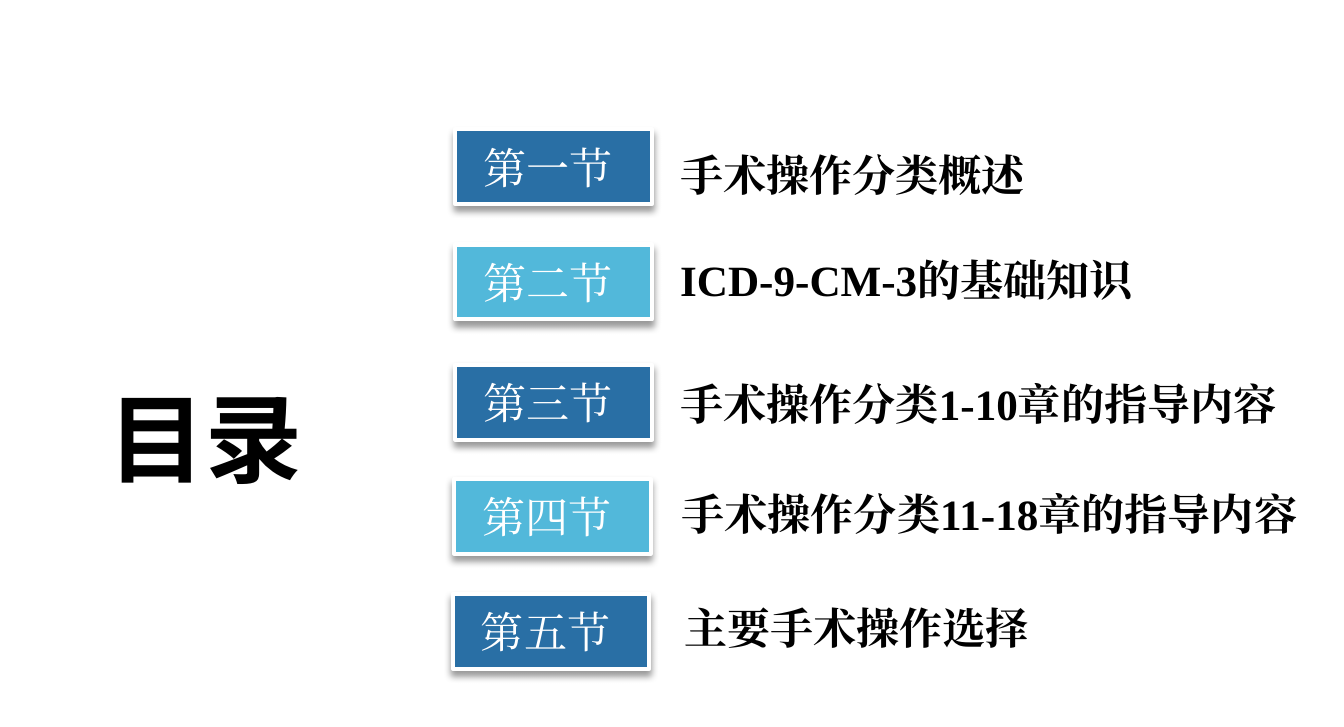
from dataclasses import dataclass

from lxml.etree import SubElement
from pptx import Presentation
from pptx.dml.color import RGBColor
from pptx.enum.shapes import MSO_SHAPE
from pptx.enum.text import MSO_ANCHOR, MSO_AUTO_SIZE, PP_ALIGN
from pptx.oxml.ns import qn
from pptx.shapes.autoshape import Shape
from pptx.slide import Slide
from pptx.text.text import _Paragraph as Paragraph
from pptx.util import Inches, Pt


@dataclass(frozen=True)
class Theme:
    dark_blue: RGBColor = RGBColor(0x29, 0x6F, 0xA5)
    light_blue: RGBColor = RGBColor(0x52, 0xB8, 0xDA)
    white: RGBColor = RGBColor(0xFF, 0xFF, 0xFF)
    black: RGBColor = RGBColor(0, 0, 0)
    title_font: str = "Noto Sans CJK SC"
    body_font: str = "Times New Roman"
    title_size: Pt = Pt(54)
    body_size: Pt = Pt(24)
    border: Pt = Pt(2.25)
    shadow_blur: Pt = Pt(4)
    shadow_distance: Pt = Pt(3)


@dataclass(frozen=True)
class Section:
    label: str
    title: str
    label_left: float
    label_top: float
    title_left: float
    title_top: float
    title_width: float


THEME = Theme()

SECTIONS = [
    Section("第一节 ", "手术操作分类概述", 3.52, 1.0, 5.16, 1.1, 3.64),
    Section("第二节 ", "ICD-9-CM-3的基础知识", 3.52, 1.89, 5.16, 1.91, 3.91),
    Section("第三节 ", "手术操作分类1-10章的指导内容", 3.52, 2.82, 5.16, 2.87, 4.99),
    Section("第四节 ", "手术操作分类11-18章的指导内容", 3.51, 3.7, 5.17, 3.72, 5.22),
    Section("第五节 ", "主要手术操作选择", 3.5, 4.59, 5.19, 4.6, 5.2),
]


def add_span(para: Paragraph, text: str, font: str, size: Pt, color: RGBColor, bold: bool) -> None:
    span = para.add_run()
    span.text = text
    span.font.name = font
    span.font.size = size
    span.font.bold = bold
    span.font.color.rgb = color
    SubElement(span.font._element, qn("a:ea"), typeface=font)


def add_shadow(shape: Shape) -> None:
    shape.shadow.inherit = False
    effects = shape._element.spPr.find(qn("a:effectLst"))
    shadow = SubElement(
        effects,
        qn("a:outerShdw"),
        blurRad=str(THEME.shadow_blur),
        dist=str(THEME.shadow_distance),
        dir="5400000",
        rotWithShape="0",
    )
    color = SubElement(shadow, qn("a:srgbClr"), val=str(THEME.black))
    SubElement(color, qn("a:alpha"), val="40000")


def add_label(page: Slide, section: Section, fill: RGBColor) -> None:
    box = page.shapes.add_shape(
        MSO_SHAPE.RECTANGLE,
        Inches(section.label_left),
        Inches(section.label_top),
        Inches(1.52),
        Inches(0.58),
    )
    box.fill.solid()
    box.fill.fore_color.rgb = fill
    box.line.color.rgb = THEME.white
    box.line.width = THEME.border
    add_shadow(box)
    box.text_frame.vertical_anchor = MSO_ANCHOR.MIDDLE
    para = box.text_frame.paragraphs[0]
    para.alignment = PP_ALIGN.CENTER
    add_span(para, section.label, THEME.body_font, THEME.body_size, THEME.white, False)


def add_heading(page: Slide, text: str, left: float, top: float, width: float,
                height: float, font: str, size: Pt, wrap: bool) -> None:
    box = page.shapes.add_textbox(Inches(left), Inches(top), Inches(width), Inches(height))
    box.text_frame.word_wrap = wrap
    box.text_frame.auto_size = MSO_AUTO_SIZE.SHAPE_TO_FIT_TEXT
    add_span(box.text_frame.paragraphs[0], text, font, size, THEME.black, True)


def main() -> None:
    deck = Presentation()
    deck.slide_width = Inches(10.39)
    deck.slide_height = Inches(5.62)
    page = deck.slides.add_slide(deck.slide_layouts[6])
    page.background.fill.solid()
    page.background.fill.fore_color.rgb = THEME.white

    add_heading(page, "目录", 0.74, 2.88, 1.79, 1.01, THEME.title_font, THEME.title_size, False)
    for index, section in enumerate(SECTIONS):
        add_label(page, section, THEME.light_blue if index % 2 else THEME.dark_blue)
        add_heading(page, section.title, section.title_left, section.title_top,
                    section.title_width, 0.5, THEME.body_font, THEME.body_size, True)

    deck.save("out.pptx")


if __name__ == "__main__":
    main()
